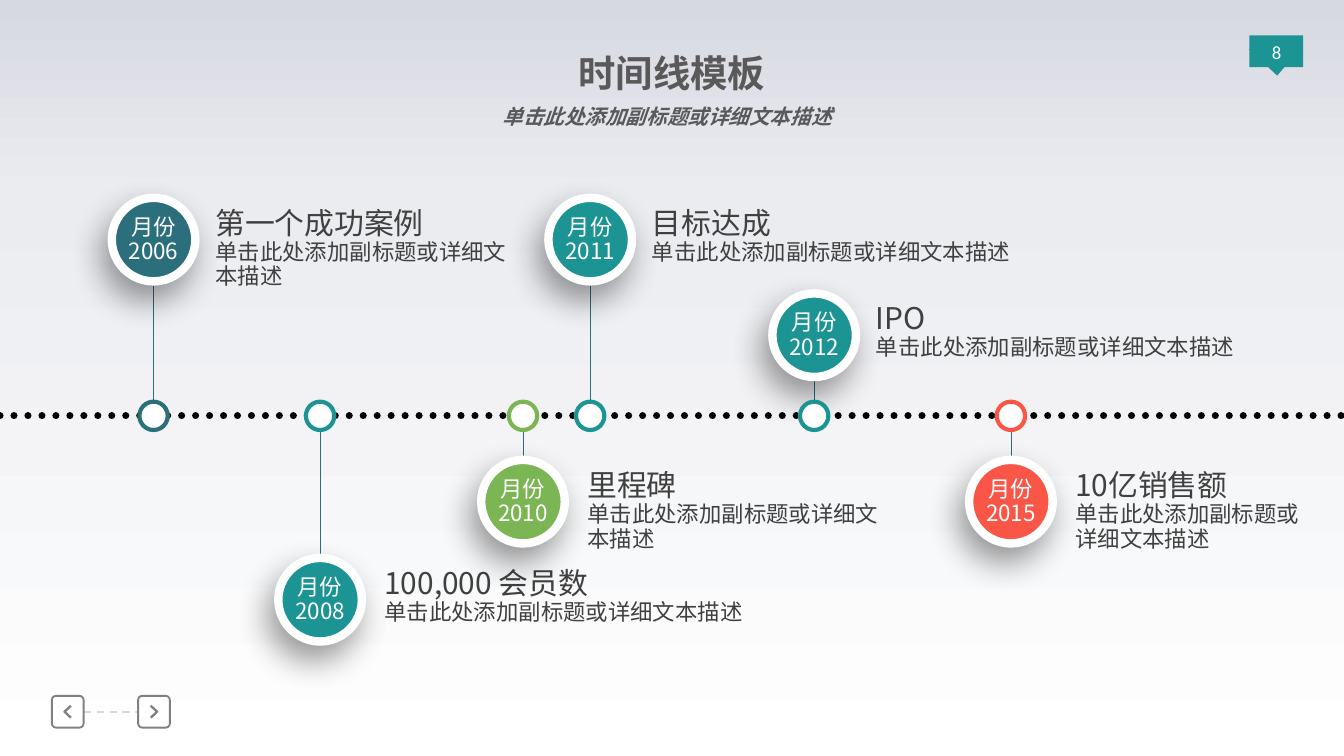
from dataclasses import dataclass

from lxml import etree
from pptx import Presentation
from pptx.dml.color import RGBColor
from pptx.enum.dml import MSO_LINE
from pptx.enum.shapes import MSO_CONNECTOR, MSO_SHAPE
from pptx.enum.text import MSO_ANCHOR, MSO_AUTO_SIZE, PP_ALIGN
from pptx.oxml.ns import qn
from pptx.util import Pt

STRAIGHT = MSO_CONNECTOR.STRAIGHT
ELLIPSE, RECTANGLE = MSO_SHAPE.OVAL, MSO_SHAPE.RECTANGLE
ROUNDED, TRIANGLE = MSO_SHAPE.ROUNDED_RECTANGLE, MSO_SHAPE.ISOSCELES_TRIANGLE
DOTTED, DASHED = MSO_LINE.ROUND_DOT, MSO_LINE.DASH
TOP, MIDDLE = MSO_ANCHOR.TOP, MSO_ANCHOR.MIDDLE
LEFT, CENTER = PP_ALIGN.LEFT, PP_ALIGN.CENTER


@dataclass(frozen=True)
class Theme:
    font: str = "Noto Sans CJK SC"
    number_font: str = "Calibri"
    navy: str = "2B6F7D"
    teal: str = "1C9494"
    green: str = "7CB554"
    red: str = "F95647"
    white: str = "FFFFFF"
    black: str = "000000"
    title: str = "595959"
    subtitle: str = "58595B"
    text: str = "404040"
    button: str = "808080"
    button_link: str = "D9D9D9"
    background: tuple = ((0, "D7D9E1"), (26, "EBECF0"), (100, "FFFFFF"))
    title_size: float = 20
    subtitle_size: float = 11
    heading_size: float = 16
    body_size: float = 12
    number_size: float = 10
    line_spacing: float = 13.2


THEME = Theme()
BADGE, DOT = 44.8, 15.2
AXIS_Y = 222.8
DETAIL = "单击此处添加副标题或详细文本描述"

# Centre x, badge top, colour, year, heading, text width
MILESTONES = [
    (82.3, 106, THEME.navy, "2006", "第一个成功案例", 181.4),
    (171.5, 298.9, THEME.teal, "2008", "100,000 会员数", 210),
    (316.2, 106, THEME.teal, "2011", "目标达成", 207.4),
    (280.2, 246.4, THEME.green, "2010", "里程碑", 181.4),
    (436.2, 157.2, THEME.teal, "2012", "IPO", 207.4),
    (541.6, 246.4, THEME.red, "2015", "10亿销售额", 141.2),
]


def rgb(value):
    return RGBColor.from_string(value)


def style_paragraph(paragraph, size, color, align=LEFT, name=THEME.font, spacing=None):
    font = paragraph.font
    font.name, font.size, font.color.rgb = name, Pt(size), rgb(color)
    east_asian = etree.Element(qn("a:ea"), typeface=name)
    paragraph._p.pPr.find(qn("a:defRPr")).find(qn("a:latin")).addnext(east_asian)
    paragraph.alignment = align
    paragraph.space_before = Pt(0)
    if spacing:
        paragraph.line_spacing = Pt(spacing)
    return font


def set_frame(frame, insets, anchor=TOP, wrap=True):
    (frame.margin_left, frame.margin_top,
     frame.margin_right, frame.margin_bottom) = map(Pt, insets)
    frame.vertical_anchor, frame.word_wrap = anchor, wrap
    frame.auto_size = MSO_AUTO_SIZE.NONE


def add_filled(slide, kind, box, fill=None, line=None, width=1):
    shape = slide.shapes.add_shape(kind, *map(Pt, box))
    shape.shadow.inherit = False
    paint(shape, fill, line, width)
    return shape


def paint(shape, fill, line, width):
    if fill:
        shape.fill.solid()
        shape.fill.fore_color.rgb = rgb(fill)
    else:
        shape.fill.background()
    if line:
        shape.line.color.rgb = rgb(line)
        shape.line.width = Pt(width)
    else:
        shape.line.fill.background()


def add_line(slide, x1, y1, x2, y2, color, width, dash=None):
    line = slide.shapes.add_connector(STRAIGHT, *map(Pt, (x1, y1, x2, y2)))
    line.line.color.rgb, line.line.width = rgb(color), Pt(width)
    if dash:
        line.line.dash_style = dash
    etree.SubElement(line._element.spPr, qn("a:effectLst"))
    return line


def add_soft_shadow(shape):
    effects = shape._element.spPr.find(qn("a:effectLst"))
    shadow = etree.SubElement(
        effects, qn("a:outerShdw"), blurRad=str(Pt(18)), dist=str(Pt(9)),
        dir=str(114 * 60000), algn="ctr", rotWithShape="0")
    color = etree.SubElement(shadow, qn("a:srgbClr"), val=THEME.black)
    etree.SubElement(color, qn("a:alpha"), val="40000")


def set_background(slide):
    fill = slide.background.fill
    fill.gradient()
    fill.gradient_angle = 270
    stops = next(slide._element.iter(qn("a:gsLst")))
    for stop in list(stops):
        stops.remove(stop)
    for position, color in THEME.background:
        stop = etree.SubElement(stops, qn("a:gs"), pos=str(position * 1000))
        etree.SubElement(stop, qn("a:srgbClr"), val=color)


def place_heading(placeholder, box, text, size, color, italic=False):
    placeholder.left, placeholder.top, placeholder.width, placeholder.height = map(Pt, box)
    frame = placeholder.text_frame
    set_frame(frame, (0, 0, 0, 0), MIDDLE, wrap=False)
    frame.text = text
    font = style_paragraph(frame.paragraphs[0], size, color, CENTER)
    font.bold, font.italic = True, italic


def add_page_marker(slide, left, top, width, height):
    add_filled(slide, RECTANGLE, (left, top, width, height), THEME.teal)
    pointer = add_filled(slide, TRIANGLE, (left, top + 6.5, width, 15), THEME.teal)
    pointer.rotation = 176.8
    number = slide.shapes.add_textbox(*map(Pt, (left + 1.2, top - 3.2, 26.6, 27.4)))
    set_frame(number.text_frame, (0, 0, 0, 3.6), MIDDLE)
    number.text_frame.text = "8"
    style_paragraph(number.text_frame.paragraphs[0], THEME.number_size, THEME.white,
                    CENTER, THEME.number_font)


def add_navigation(slide, left, top, size, pitch):
    middle = top + size / 2
    add_line(slide, left + size, middle, left + pitch, middle,
             THEME.button_link, 1, DASHED)
    for x, direction in ((left, -1), (left + pitch, 1)):
        button = add_filled(slide, ROUNDED, (x, top, size, size), line=THEME.button)
        button.adjustments[0] = 0.13
        center, reach = x + size / 2, 1.7 * direction
        builder = slide.shapes.build_freeform(Pt(center - reach), Pt(middle - 3.2))
        builder.add_line_segments(
            [(Pt(center + reach), Pt(middle)), (Pt(center - reach), Pt(middle + 3.2))],
            close=False)
        arrow = builder.convert_to_shape()
        arrow.shadow.inherit = False
        paint(arrow, None, THEME.button, 1.25)


def add_milestone(slide, center, top, color, year, heading, text_width):
    above = top < AXIS_Y
    # Stem between badge and axis
    start = top + BADGE if above else top
    end = AXIS_Y + (-DOT if above else DOT) / 2
    add_line(slide, center, start, center, end, THEME.navy, 0.25)
    # Date badge
    badge = add_filled(slide, ELLIPSE, (center - BADGE / 2, top, BADGE, BADGE),
                       color, THEME.white, 4.5)
    add_soft_shadow(badge)
    set_frame(badge.text_frame, (0, 3.6, 0, 3.6), MIDDLE, wrap=False)
    badge.text_frame.text = "月份\v" + year
    style_paragraph(badge.text_frame.paragraphs[0], THEME.body_size, THEME.white,
                    CENTER, spacing=THEME.line_spacing)
    # Description
    text_left = center + (26 if above else 27.4)
    description = slide.shapes.add_textbox(
        *map(Pt, (text_left, top + 5.9, text_width, 47)))
    frame = description.text_frame
    set_frame(frame, (7.2, 3.6, 7.2, 3.6))
    frame.text = heading + "\n" + DETAIL
    for paragraph, size in zip(frame.paragraphs, (THEME.heading_size, THEME.body_size)):
        style_paragraph(paragraph, size, THEME.text, spacing=THEME.line_spacing)
    # Dot on the axis
    add_filled(slide, ELLIPSE, (center - DOT / 2, AXIS_Y - DOT / 2, DOT, DOT),
               THEME.white, color, 2.25)


def main():
    deck = Presentation()
    deck.slide_width, deck.slide_height = Pt(720), Pt(405)
    slide = deck.slides.add_slide(deck.slide_layouts[0])
    set_background(slide)

    # Title and subtitle
    place_heading(slide.shapes.title, (280.8, 26.6, 158.4, 24.5), "时间线模板",
                  THEME.title_size, THEME.title)
    place_heading(slide.placeholders[1], (261.4, 51.8, 192.2, 20.9), DETAIL,
                  THEME.subtitle_size, THEME.subtitle, italic=True)

    add_page_marker(slide, 669.4, 19, 28.8, 17)
    add_navigation(slide, 27.8, 372.8, 17, 46.2)

    # Timeline
    axis = add_line(slide, 0, AXIS_Y, 720, AXIS_Y, THEME.black, 3.75, DOTTED)
    axis.line._ln.set("cap", "rnd")
    for milestone in MILESTONES:
        add_milestone(slide, *milestone)

    deck.save("out.pptx")


if __name__ == "__main__":
    main()
